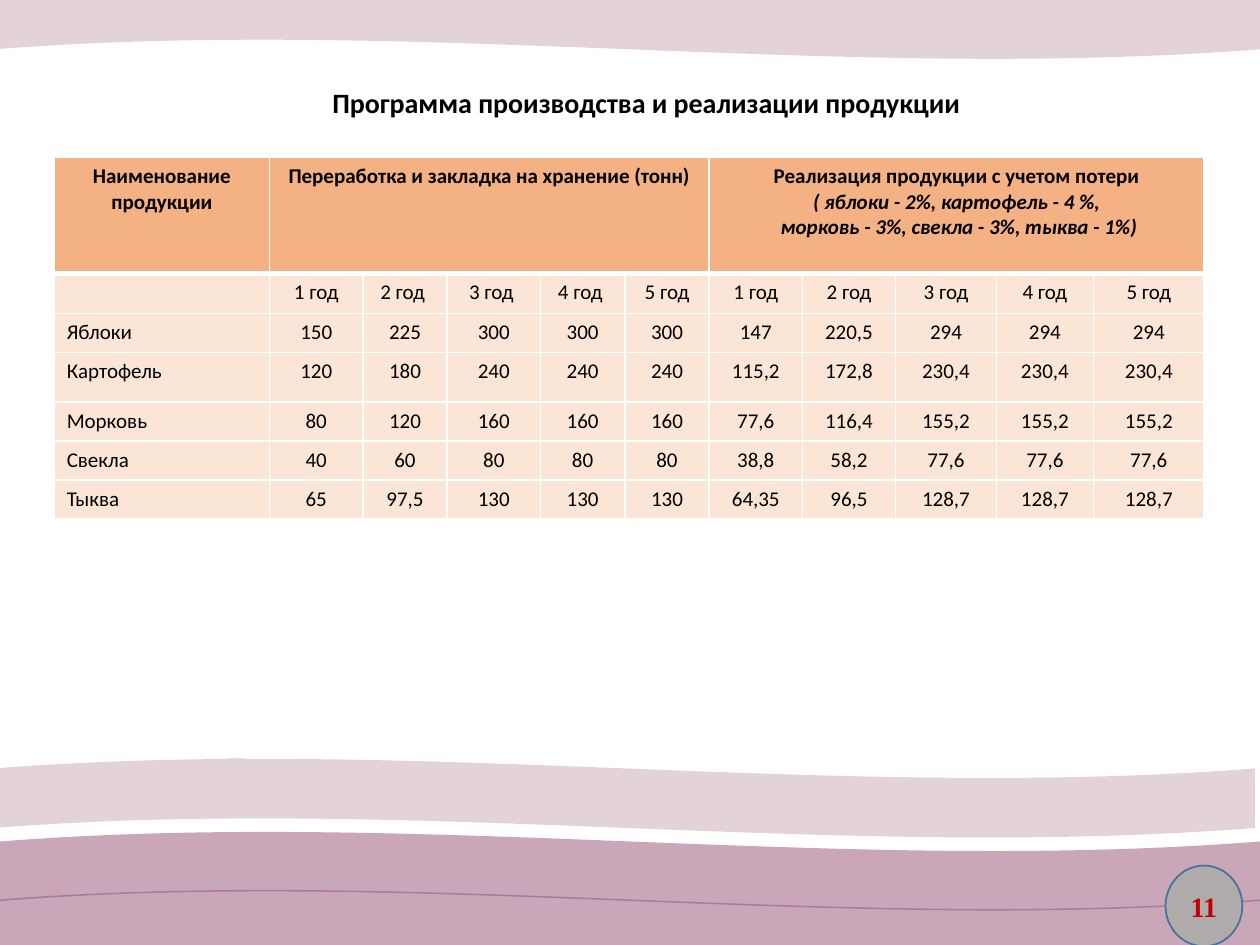
import lxml.etree
import pptx
import pptx.dml.color
import pptx.enum.shapes
import pptx.enum.text
import pptx.oxml.ns
import pptx.util

Inches = pptx.util.Inches
RGB = pptx.dml.color.RGBColor
SHAPE = pptx.enum.shapes.MSO_SHAPE
ALIGN = pptx.enum.text.PP_ALIGN
MIDDLE = pptx.enum.text.MSO_ANCHOR.MIDDLE
qn = pptx.oxml.ns.qn

BLACK = RGB(0x00, 0x00, 0x00)
WHITE = RGB(0xFF, 0xFF, 0xFF)
PLUM = RGB(0x95, 0x4F, 0x72)
PALE = RGB(0xE7, 0xE6, 0xE6)
GRAY = RGB(0xAF, 0xAB, 0xAB)
BLUE = RGB(0x43, 0x73, 0x9E)
RED = RGB(0xC0, 0x00, 0x00)
ORANGE = RGB(0xF4, 0xB1, 0x83)
PEACH = RGB(0xFB, 0xE5, 0xD6)

WIDTHS = [1.71, 0.74, 0.67, 0.74, 0.67, 0.67, 0.74, 0.74, 0.8, 0.77, 0.88]
HEIGHTS = [0.92, 0.32, 0.31, 0.39, 0.31, 0.31, 0.31]
HEADS = {
    0: [("Наименование продукции", False)],
    1: [("Переработка и закладка на хранение (тонн)", False)],
    6: [("Реализация продукции с учетом потери", False),
        ("( яблоки - 2%, картофель - 4 %,", True),
        (" морковь - 3%, свекла - 3%, тыква - 1%)", True)],
}
ROWS = [
    ["", "1 год", "2 год ", "3 год ", "4 год ", "5 год",
     "1 год", "2 год", "3 год", "4 год", "5 год"],
    ["Яблоки", "150", "225", "300", "300", "300",
     "147", "220,5", "294", "294", "294"],
    ["Картофель", "120", "180", "240", "240", "240",
     "115,2", "172,8", "230,4", "230,4", "230,4"],
    ["Морковь", "80", "120", "160", "160", "160",
     "77,6", "116,4", "155,2", "155,2", "155,2"],
    ["Свекла", "40", "60", "80", "80", "80",
     "38,8", "58,2", "77,6", "77,6", "77,6"],
    ["Тыква", "65", "97,5", "130", "130", "130",
     "64,35", "96,5", "128,7", "128,7", "128,7"],
]


def add_run(para, text, size, color=BLACK, face="Calibri", bold=False, italic=False):
    run = para.add_run()
    run.text = text
    font = run.font
    font.name, font.size = face, pptx.util.Pt(size)
    font.bold, font.italic = bold, italic
    font.color.rgb = color


def add_wave(slide, left, top, width, alpha):
    """Draw a plum band; alpha is its opacity in percent."""
    wave = slide.shapes.add_shape(
        SHAPE.WAVE, Inches(left), Inches(top), Inches(width), Inches(0.63))
    wave.shadow.inherit = False
    wave.line.fill.background()
    wave.fill.solid()
    wave.fill.fore_color.rgb = PLUM
    tint = wave.fill._xPr.find(".//" + qn("a:srgbClr"))
    lxml.etree.SubElement(tint, qn("a:alpha"), val=str(alpha * 1000))


def add_dash(slide):
    dash = slide.shapes.add_connector(
        pptx.enum.shapes.MSO_CONNECTOR.STRAIGHT,
        Inches(1.79), Inches(6.02), Inches(1.94), Inches(6.02))
    dash.line.color.rgb = PALE
    dash.line.width = pptx.util.Pt(0.75)
    lxml.etree.SubElement(dash._element.spPr, qn("a:effectLst"))


def add_title(slide):
    box = slide.shapes.add_textbox(Inches(0.62), Inches(0.6), Inches(9.02), Inches(0.46))
    frame = box.text_frame
    frame.word_wrap = True
    frame.vertical_anchor = MIDDLE
    para = frame.paragraphs[0]
    para.alignment = ALIGN.CENTER
    para.line_spacing = 0.9
    add_run(para, "Программа производства и реализации продукции", 16, bold=True)


def add_badge(slide):
    """Draw the round page number."""
    badge = slide.shapes.add_shape(
        SHAPE.OVAL, Inches(9.25), Inches(6.87), Inches(0.61), Inches(0.64))
    badge.shadow.inherit = False
    badge.fill.solid()
    badge.fill.fore_color.rgb = GRAY
    badge.line.color.rgb = BLUE
    badge.line.width = pptx.util.Pt(1)
    badge.text_frame.vertical_anchor = MIDDLE
    para = badge.text_frame.paragraphs[0]
    para.alignment = ALIGN.CENTER
    add_run(para, "11", 16, RED, "Times New Roman", bold=True)


def style_cell(cell, fill, top=1, bottom=1):
    """Set white borders, with widths in points, and then the fill."""
    props = cell._tc.get_or_add_tcPr()
    for side, width in (("L", 1), ("R", 1), ("T", top), ("B", bottom)):
        edge = lxml.etree.SubElement(
            props, qn("a:ln" + side), w=str(pptx.util.Pt(width)))
        solid = lxml.etree.SubElement(edge, qn("a:solidFill"))
        lxml.etree.SubElement(solid, qn("a:srgbClr"), val=str(WHITE))
    cell.fill.solid()
    cell.fill.fore_color.rgb = fill


def fill_head(table):
    for col in range(len(WIDTHS)):
        style_cell(table.cell(0, col), ORANGE, bottom=3)
    for col in (1, 6):
        table.cell(0, col).merge(table.cell(0, col + 4))
    for col, lines in HEADS.items():
        frame = table.cell(0, col).text_frame
        for num, (text, italic) in enumerate(lines):
            para = frame.add_paragraph() if num else frame.paragraphs[0]
            para.alignment = ALIGN.CENTER
            add_run(para, text, 12, bold=True, italic=italic)


def fill_body(table):
    for row, texts in enumerate(ROWS, 1):
        for col, text in enumerate(texts):
            cell = table.cell(row, col)
            style_cell(cell, PEACH, top=3 if row == 1 else 1)
            para = cell.text_frame.paragraphs[0]
            para.alignment = ALIGN.CENTER if col else ALIGN.LEFT
            if text:
                add_run(para, text, 12)
            else:
                lxml.etree.SubElement(para._p, qn("a:endParaRPr"), sz="1200")


def add_table(slide):
    table = slide.shapes.add_table(
        len(HEIGHTS), len(WIDTHS), Inches(0.43), Inches(1.25),
        Inches(sum(WIDTHS)), Inches(sum(HEIGHTS))).table
    for col, width in zip(table.columns, WIDTHS):
        col.width = Inches(width)
    for row, height in zip(table.rows, HEIGHTS):
        row.height = Inches(height)
    fill_head(table)
    fill_body(table)


def main():
    deck = pptx.Presentation()
    deck.slide_width, deck.slide_height = Inches(10), Inches(7.5)
    slide = deck.slides.add_slide(deck.slide_layouts[6])
    add_wave(slide, -0.04, -0.16, 10.04, 25)
    add_dash(slide)
    add_wave(slide, -0.04, 6.02, 10, 25)
    for top in (6.6, 7.06):
        add_wave(slide, 0, top, 10, 50)
    add_title(slide)
    add_badge(slide)
    add_table(slide)
    deck.save("out.pptx")


if __name__ == "__main__":
    main()
